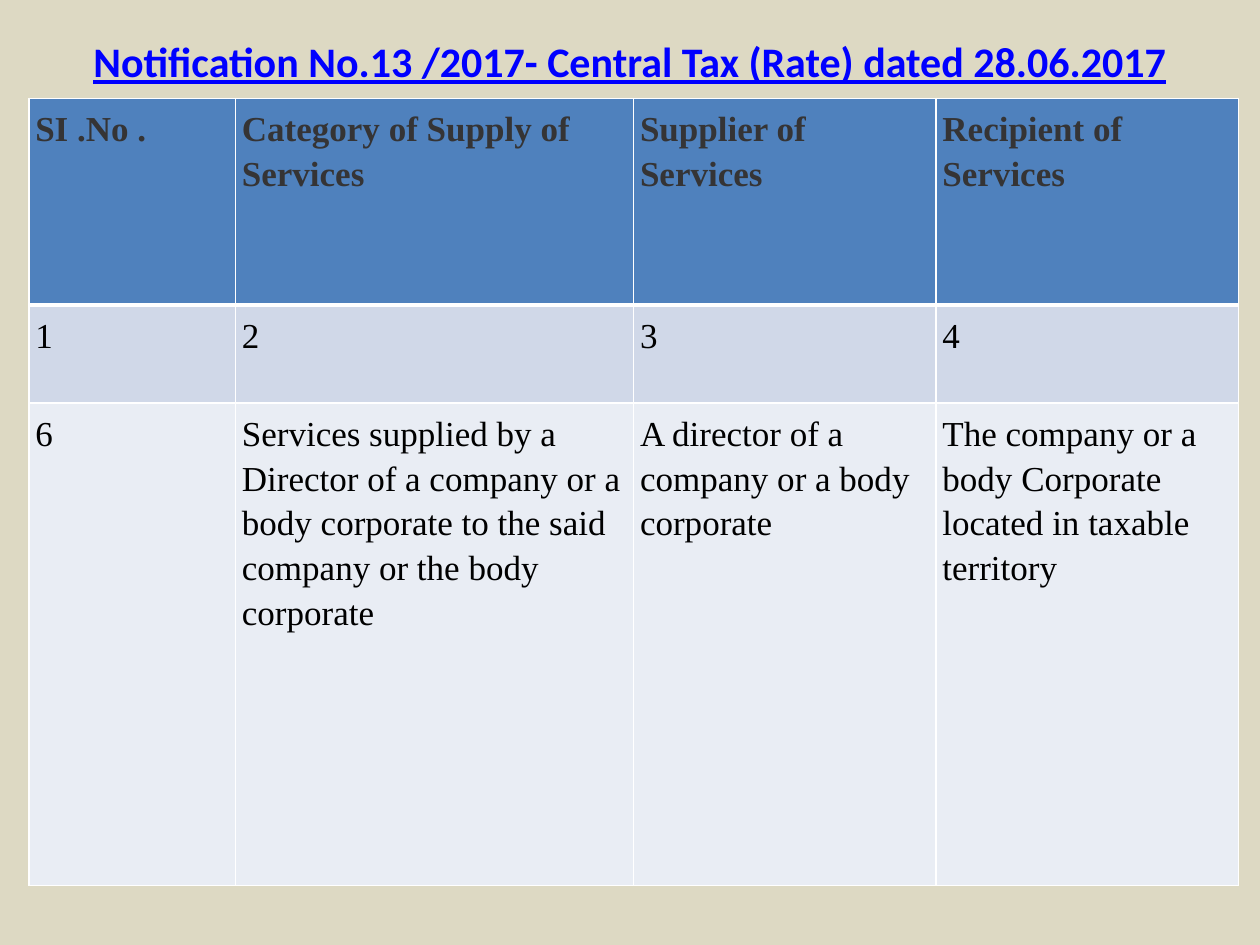
import dataclasses

import lxml.etree
import pptx
import pptx.dml.color
import pptx.enum.text
import pptx.oxml.ns
import pptx.util


@dataclasses.dataclass(frozen=True)
class Theme:
    background: str = "DDD9C3"
    title: str = "0000FF"
    header_text: str = "353435"
    body_text: str = "000000"
    border: str = "FFFFFF"
    row_fills: tuple = ("4F81BD", "D0D8E8", "E9EDF4")
    title_font: str = "Calibri"
    table_font: str = "Times New Roman"
    title_size: int = 24
    table_size: int = 20
    thin: int = 1
    thick: int = 3


class SlideBuilder:
    """Place styled elements on a slide divided into 100 columns and 75 rows."""

    def __init__(self, prs, theme):
        self.theme = theme
        self.col = prs.slide_width / 100
        self.row = prs.slide_height / 75
        self.s = prs.slides.add_slide(prs.slide_layouts[5])
        self.fill(self.s.background.fill, theme.background)

    def box(self, x, y, w, h):
        return int(x * self.col), int(y * self.row), int(w * self.col), int(h * self.row)

    def fill(self, target, color):
        target.solid()
        target.fore_color.rgb = pptx.dml.color.RGBColor.from_string(color)

    def run(self, p, text, font, size, color, bold=False, underline=None):
        r = p.add_run()
        r.text = text
        r.font.name = font
        r.font.size = pptx.util.Pt(size)
        r.font.bold = bold
        r.font.underline = underline
        r.font.color.rgb = pptx.dml.color.RGBColor.from_string(color)

    def title(self, text, x, y, w, h):
        sp = self.s.shapes.title
        sp.left, sp.top, sp.width, sp.height = self.box(x, y, w, h)
        tf = sp.text_frame
        tf.word_wrap = True
        tf.auto_size = pptx.enum.text.MSO_AUTO_SIZE.NONE
        tf.vertical_anchor = pptx.enum.text.MSO_ANCHOR.MIDDLE
        tf.margin_bottom = int(4 * self.row)
        p = tf.paragraphs[0]
        p.alignment = pptx.enum.text.PP_ALIGN.CENTER
        self.run(p, text, self.theme.title_font, self.theme.title_size,
                 self.theme.title, bold=True, underline=True)

    def border(self, cell, side, width):
        tc_pr = cell._tc.get_or_add_tcPr()
        ln = lxml.etree.SubElement(tc_pr, pptx.oxml.ns.qn(f"a:ln{side}"),
                                   w=str(pptx.util.Pt(width)))
        solid = lxml.etree.SubElement(ln, pptx.oxml.ns.qn("a:solidFill"))
        lxml.etree.SubElement(solid, pptx.oxml.ns.qn("a:srgbClr"), val=self.theme.border)

    def cell(self, cell, text, row):
        theme = self.theme
        header = row == 0
        widths = {"L": theme.thin, "R": theme.thin,
                  "T": theme.thick if row == 1 else theme.thin,
                  "B": theme.thick if header else theme.thin}
        for side, width in widths.items():
            self.border(cell, side, width)
        self.fill(cell.fill, theme.row_fills[row])
        margin = pptx.util.Inches(0.05)
        cell.margin_left = cell.margin_right = margin
        cell.margin_top = cell.margin_bottom = margin
        p = cell.text_frame.paragraphs[0]
        p.line_spacing = 1.15
        self.run(p, text, theme.table_font, theme.table_size,
                 theme.header_text if header else theme.body_text, bold=header)

    def table(self, rows, x, y, widths, heights):
        frame = self.s.shapes.add_table(len(heights), len(widths),
                                        *self.box(x, y, sum(widths), sum(heights)))
        table = frame.table
        for column, width in zip(table.columns, widths):
            column.width = int(width * self.col)
        for i, (texts, height) in enumerate(zip(rows, heights)):
            table.rows[i].height = int(height * self.row)
            for j, text in enumerate(texts):
                self.cell(table.cell(i, j), text, i)


def main():
    prs = pptx.Presentation()
    prs.slide_width = pptx.util.Inches(10)
    prs.slide_height = pptx.util.Inches(7.5)
    slide = SlideBuilder(prs, Theme())
    slide.title("Notification No.13 /2017- Central Tax (Rate) dated 28.06.2017", 5, 3, 90, 7.2)
    rows = [
        ("SI .No .", "Category of Supply of Services", "Supplier of Services",
         "Recipient of Services"),
        ("1", "2", "3", "4"),
        ("6",
         "Services supplied by a Director of a company or a body corporate "
         "to the said company or the body corporate",
         "A director of a company or a body corporate",
         "The company or a body Corporate located in taxable territory"),
    ]
    slide.table(rows, 2.3, 7.8, widths=(16.4, 31.6, 24, 24), heights=(16.4, 7.8, 38.3))
    prs.save("out.pptx")


if __name__ == "__main__":
    main()
